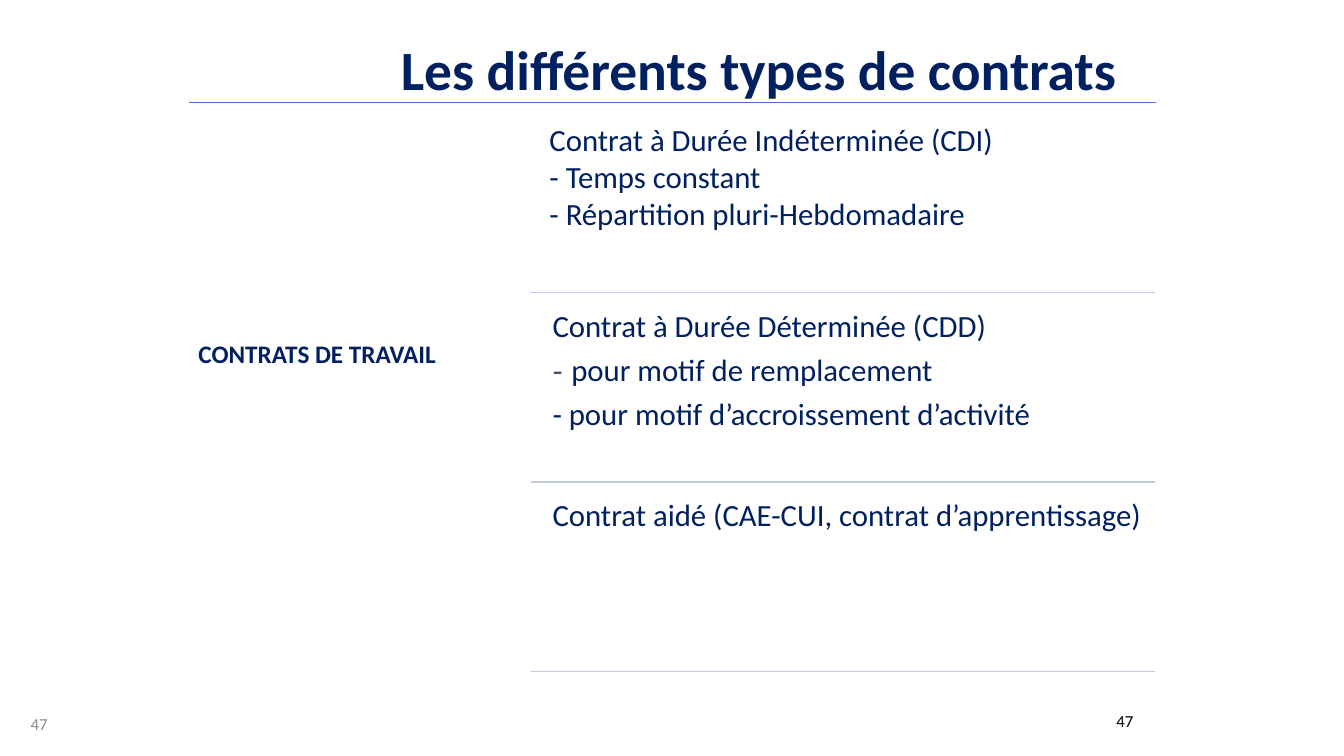
from pptx import Presentation
from pptx.dml.color import RGBColor
from pptx.enum.shapes import MSO_CONNECTOR
from pptx.enum.text import MSO_ANCHOR as Anchor, PP_ALIGN as Align
from pptx.oxml.ns import qn
from pptx.util import Inches, Pt
from lxml import etree

NAVY, SLATE, BLUE, PALE = "002060", "43556B", "4472C4", "C1C9E4"
CONTRACTS = [
    ["Contrat à Durée Indéterminée (CDI)", "- Temps constant", "- Répartition pluri-Hebdomadaire"],
    [
        "Contrat à Durée Déterminée (CDD)",
        [("- ", "Arial", SLATE), ("pour motif de remplacement", "Calibri", NAVY)],
        "- pour motif d’accroissement d’activité",
    ],
    ["Contrat aidé (CAE-CUI, contrat d’apprentissage)"],
]


def rgb(value):
    """Turn a hex string into a colour."""
    return RGBColor.from_string(value)


def add_text(page, box, lines, size=22, color=NAVY, bold=False, align=Align.LEFT,
             anchor=Anchor.TOP, inset=(0.1, 0.05), spacing=None, after=0):
    """Write lines, each a string or a list of (text, font, colour) spans."""
    frame = page.shapes.add_textbox(*map(Inches, box)).text_frame
    frame.word_wrap = True
    frame.vertical_anchor = anchor
    frame.margin_left = frame.margin_right = Inches(inset[0])
    frame.margin_top = frame.margin_bottom = Inches(inset[1])
    for index, line in enumerate(lines):
        para = frame.add_paragraph() if index else frame.paragraphs[0]
        para.alignment = align
        para.space_after = Pt(after)
        if spacing:
            para.line_spacing = spacing
        spans = [(line, "Calibri", color)] if isinstance(line, str) else line
        for text, font, tint in spans:
            span = para.add_run()
            span.text = text
            span.font.name = font
            span.font.size = Pt(size)
            span.font.bold = bold
            span.font.color.rgb = rgb(tint)


def add_rule(page, left, top, width, color, weight):
    """Draw a horizontal line without shadow."""
    rule = page.shapes.add_connector(
        MSO_CONNECTOR.STRAIGHT, *map(Inches, (left, top, left + width, top)))
    rule.line.color.rgb = rgb(color)
    rule.line.width = Pt(weight)
    etree.SubElement(rule._element.spPr, qn("a:effectLst"))


def add_title(page, box):
    """Place the slide title."""
    add_text(page, box, ["Les différents types de contrats"], size=39.6, bold=True,
             align=Align.CENTER, anchor=Anchor.MIDDLE, spacing=0.9)


def add_contracts(page, box):
    """Place the heading on the left and the ruled contract rows on the right."""
    left, top, width, height = box
    add_rule(page, left, top, width, BLUE, 0.5)
    add_text(page, (left, top + 2.29, 3.4, 0.4), ["CONTRATS DE TRAVAIL"],
             size=18, bold=True, anchor=Anchor.MIDDLE)
    gap = 0.09
    step = (height - gap) / len(CONTRACTS)
    for index, lines in enumerate(CONTRACTS):
        row_top = top + gap + index * step
        style = {"spacing": 0.9, "after": 7.7} if index else {}
        row_left = left + (3.52 if index else 3.49)
        add_text(page, (row_left, row_top, 6.07, step - gap), lines,
                 inset=(gap, gap), **style)
        add_rule(page, left + 3.4, row_top + step - gap, 6.19, PALE, 1)


def add_page_number(page, box, color):
    """Place a right-aligned page number."""
    add_text(page, box, ["47"], size=12, color=color, align=Align.RIGHT, anchor=Anchor.MIDDLE)


def main():
    """Build and save the deck."""
    deck = Presentation()
    deck.slide_width, deck.slide_height = Inches(13.33), Inches(7.5)
    page = deck.slides.add_slide(deck.slide_layouts[6])
    add_page_number(page, (10.71, 6.95, 0.63, 0.4), "000000")
    add_title(page, (2.84, 0.42, 9.37, 0.6))
    add_page_number(page, (0.08, 6.98, 0.49, 0.4), "8C8C8C")
    add_contracts(page, (1.87, 1.02, 9.6, 5.73))
    deck.save("out.pptx")


if __name__ == "__main__":
    main()
